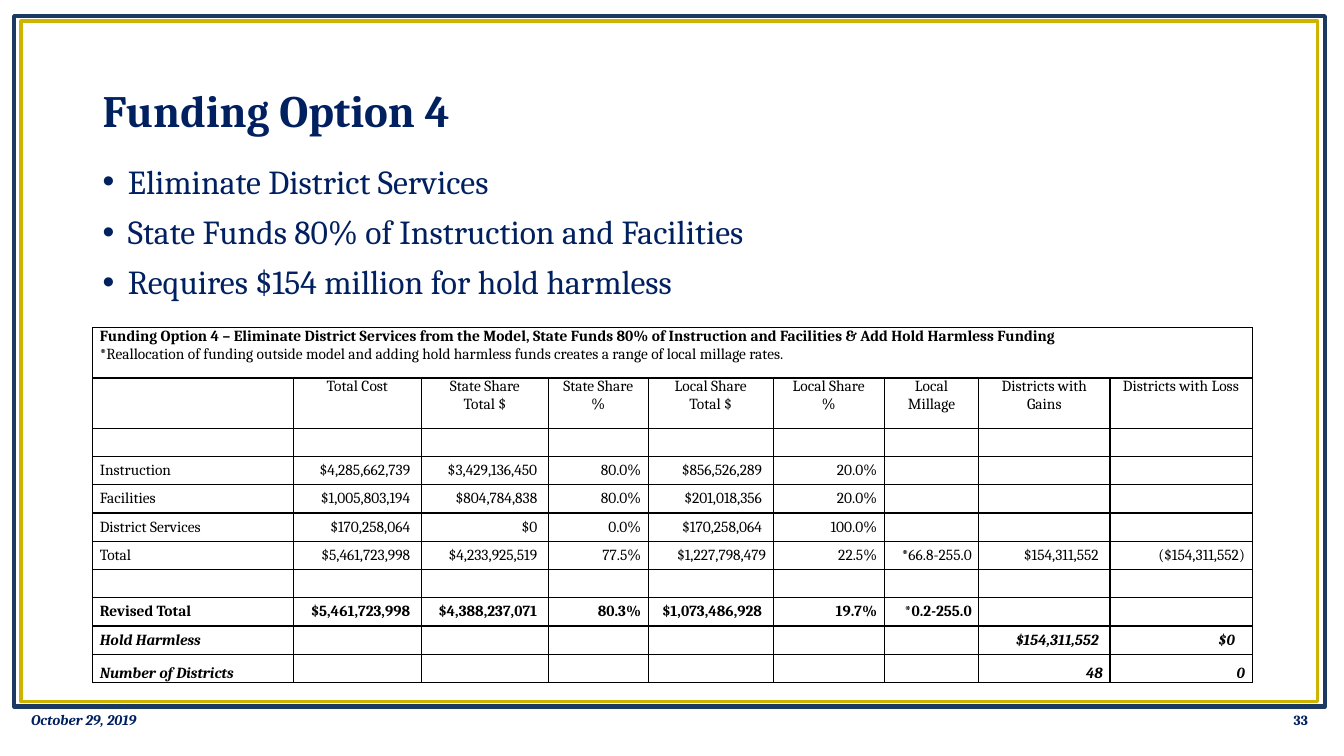
from lxml import etree
from pptx import Presentation
from pptx.dml.color import RGBColor
from pptx.enum.shapes import MSO_SHAPE
from pptx.enum.text import MSO_ANCHOR as ANCHOR, PP_ALIGN as ALIGN
from pptx.oxml import parse_xml
from pptx.oxml.ns import nsdecls, qn
from pptx.util import Inches, Pt

FONT = "Cambria"
NAVY = RGBColor(0x00, 0x20, 0x60)
FRAME_BLUE = RGBColor(0x1C, 0x39, 0x61)
FRAME_GOLD = RGBColor(0xCC, 0xB4, 0x00)
BLACK = RGBColor(0x00, 0x00, 0x00)

TABLE_TITLE = [
    "Funding Option 4 – Eliminate District Services from the Model, State Funds 80% of "
    "Instruction and Facilities & Add Hold Harmless Funding",
    "*Reallocation of funding outside model and adding hold harmless funds creates a range "
    "of local millage rates.",
]
HEADINGS = ["", "Total Cost", "State Share\nTotal $", "State Share\n%", "Local Share\nTotal $",
            "Local Share\n%", "Local Millage", "Districts with Gains", "Districts with Loss"]
BLANK_ROW = [""] * 9
FUNDING_ROWS = [
    BLANK_ROW,
    ["Instruction", "$4,285,662,739", "$3,429,136,450", "80.0%", "$856,526,289", "20.0%", "", "", ""],
    ["Facilities", "$1,005,803,194", "$804,784,838", "80.0%", "$201,018,356", "20.0%", "", "", ""],
    ["District Services", "$170,258,064", "$0", "0.0%", "$170,258,064", "100.0%", "", "", ""],
    ["Total", "$5,461,723,998", "$4,233,925,519", "77.5%", "$1,227,798,479", "22.5%",
     "*66.8-255.0", "$154,311,552", "($154,311,552)"],
    BLANK_ROW,
    ["Revised Total", "$5,461,723,998", "$4,388,237,071", "80.3%", "$1,073,486,928", "19.7%",
     "*0.2-255.0", "", ""],
    ["Hold Harmless", "", "", "", "", "", "", "$154,311,552", "$0"],
    ["Number of Districts", "", "", "", "", "", "", "48", "0"],
]
BOLD_ROWS = {"Revised Total", "Hold Harmless", "Number of Districts"}
ITALIC_ROWS = {"Hold Harmless", "Number of Districts"}
COLUMN_WIDTHS = [1.99, 1.27, 1.26, 0.99, 1.24, 1.1, 0.94, 1.3, 1.41]
ROW_HEIGHTS = [0.5, 0.5] + [0.28] * 9
CELL_INSET, AMOUNT_INSET = 0.07, 0.11
# Right insets that differ from the rule, by row label and column
SPECIAL_INSETS = {("Total", 4): CELL_INSET, ("Hold Harmless", 8): 0.17}


def add_run(paragraph, text, size, color, bold=False, italic=False):
    run = paragraph.add_run()
    run.text = text
    font = run.font
    font.name, font.size, font.bold, font.italic = FONT, Pt(size), bold, italic
    font.color.rgb = color


def add_text_frame(slide, box, anchor):
    frame = slide.shapes.add_textbox(*map(Inches, box)).text_frame
    frame.word_wrap = True
    frame.vertical_anchor = anchor
    return frame


def add_frame(slide, box, color, width):
    border = slide.shapes.add_shape(MSO_SHAPE.RECTANGLE, *map(Inches, box))
    border.shadow.inherit = False
    border.fill.background()
    border.line.color.rgb = color
    border.line.width = Pt(width)


def add_title(slide, box, text):
    paragraph = add_text_frame(slide, box, ANCHOR.MIDDLE).paragraphs[0]
    paragraph.line_spacing = 0.9
    add_run(paragraph, text, 32, NAVY, bold=True)


def add_bullets(slide, box, points):
    frame = add_text_frame(slide, box, ANCHOR.TOP)
    for index, point in enumerate(points):
        paragraph = frame.add_paragraph() if index else frame.paragraphs[0]
        paragraph.line_spacing = 0.9
        paragraph.space_before = Pt(10 if index else 0)
        properties = paragraph._p.get_or_add_pPr()
        properties.set("marL", str(Inches(0.25)))
        properties.set("indent", str(-Inches(0.25)))
        properties.append(parse_xml(f'<a:buFont {nsdecls("a")} typeface="Arial"/>'))
        properties.append(parse_xml(f'<a:buChar {nsdecls("a")} char="•"/>'))
        add_run(paragraph, point, 24, NAVY)


def add_footer(slide, box, text, size, align, italic=False):
    paragraph = add_text_frame(slide, box, ANCHOR.MIDDLE).paragraphs[0]
    paragraph.alignment = align
    add_run(paragraph, text, size, NAVY, bold=True, italic=italic)


def style_cell(cell):
    """Plain cell with a thin black border on every side."""
    for side in ("lnL", "lnR", "lnT", "lnB"):
        cell._tc.get_or_add_tcPr().append(parse_xml(
            f'<a:{side} {nsdecls("a")} w="{Pt(1)}"><a:solidFill>'
            f'<a:srgbClr val="{BLACK}"/></a:solidFill></a:{side}>'))
    cell.fill.background()
    cell.margin_left = cell.margin_right = Inches(CELL_INSET)
    cell.margin_top = cell.margin_bottom = 0


def fill_cell(cell, lines, align, anchor=ANCHOR.TOP, bold=False, italic=False):
    cell.vertical_anchor = anchor
    for index, line in enumerate(lines):
        frame = cell.text_frame
        paragraph = frame.add_paragraph() if index else frame.paragraphs[0]
        paragraph.alignment = align
        if line:
            add_run(paragraph, line, 11, BLACK, bold, italic)
        else:  # keeps an empty row at its small height
            etree.SubElement(paragraph._p, qn("a:endParaRPr"), sz="1100")


def add_funding_table(slide, box):
    table = slide.shapes.add_table(len(ROW_HEIGHTS), len(COLUMN_WIDTHS),
                                   *map(Inches, box)).table
    table.first_row = table.horz_banding = False
    for column, width in zip(table.columns, COLUMN_WIDTHS):
        column.width = Inches(width)
    for row, height in zip(table.rows, ROW_HEIGHTS):
        row.height = Inches(height)
    for cell in table.iter_cells():
        style_cell(cell)

    # Title row across all columns
    table_title = table.cell(0, 0)
    table_title.merge(table.cell(0, len(COLUMN_WIDTHS) - 1))
    fill_cell(table_title, TABLE_TITLE, ALIGN.LEFT)
    table_title.text_frame.paragraphs[0].runs[0].font.bold = True

    # Column headings
    for column, heading in enumerate(HEADINGS):
        fill_cell(table.cell(1, column), heading.split("\n"), ALIGN.CENTER)

    # Funding figures
    for row, values in enumerate(FUNDING_ROWS, start=2):
        label = values[0]
        anchor = ANCHOR.BOTTOM if label == "Number of Districts" else ANCHOR.MIDDLE
        for column, value in enumerate(values):
            cell = table.cell(row, column)
            fill_cell(cell, [value], ALIGN.RIGHT if column else ALIGN.LEFT, anchor,
                      label in BOLD_ROWS, label in ITALIC_ROWS)
            inset = AMOUNT_INSET if value.startswith("$") else CELL_INSET
            cell.margin_right = Inches(SPECIAL_INSETS.get((label, column), inset))


def main():
    presentation = Presentation()
    presentation.slide_width, presentation.slide_height = Inches(13.33), Inches(7.5)
    slide = presentation.slides.add_slide(presentation.slide_layouts[6])

    # Double frame
    add_frame(slide, (0.14, 0.16, 13, 6.85), FRAME_BLUE, 3)
    add_frame(slide, (0.21, 0.21, 12.86, 6.75), FRAME_GOLD, 2.5)

    # Content
    add_title(slide, (0.92, 0.4, 11.5, 1.45), "Funding Option 4")
    add_bullets(slide, (0.92, 1.59, 11.5, 5.17), [
        "Eliminate District Services",
        "State Funds 80% of Instruction and Facilities",
        "Requires $154 million for hold harmless",
    ])
    add_funding_table(slide, (0.92, 3.25, 11.5, 3.51))

    # Footer
    add_footer(slide, (10.07, 6.94, 3, 0.4), "33", 10, ALIGN.RIGHT)
    add_footer(slide, (0.21, 6.94, 3, 0.4), "October 29, 2019", 10.5, ALIGN.LEFT, italic=True)

    presentation.save("out.pptx")


if __name__ == "__main__":
    main()
